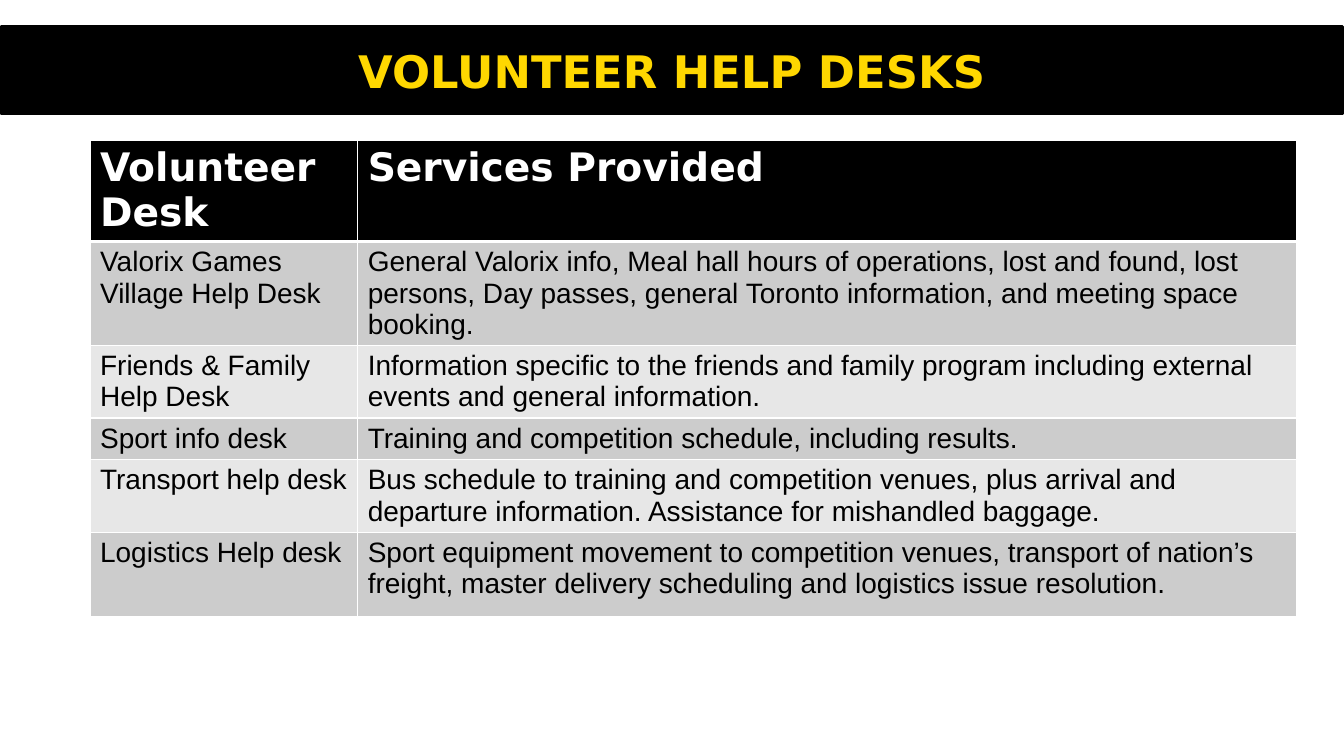
import pptx
import pptx.dml.color
import pptx.enum.shapes
import pptx.enum.text
import pptx.oxml
import pptx.oxml.ns
import pptx.util

Pt = pptx.util.Pt
COLORS = {
    "black": "000000",
    "gold": "FFD700",
    "white": "FFFFFF",
    "dark_band": "CCCCCC",
    "light_band": "E7E7E7",
}
HEADING_FONT = "DejaVu Sans"
BODY_FONT = "Arial"

HEADINGS = ("Volunteer Desk", "Services Provided")
DESKS = [
    ("Valorix Games Village Help Desk",
     "General Valorix info, Meal hall hours of operations, lost and found, lost persons, "
     "Day passes, general Toronto information, and meeting space booking."),
    ("Friends & Family Help Desk",
     "Information specific to the friends and family program including external events "
     "and general information."),
    ("Sport info desk",
     "Training and competition schedule, including results."),
    ("Transport help desk",
     "Bus schedule to training and competition venues, plus arrival and departure "
     "information. Assistance for mishandled baggage."),
    ("Logistics Help desk",
     "Sport equipment movement to competition venues, transport of nation’s freight, "
     "master delivery scheduling and logistics issue resolution."),
]
COLUMN_WIDTHS = (191.2, 670.8)
ROW_HEIGHTS = (72.5, 74, 52, 29.5, 52, 60)


def rgb(name):
    return pptx.dml.color.RGBColor.from_string(COLORS[name])


def style_text(paragraph, font_name, size, color, bold):
    for run in paragraph.runs:
        run.font.name = font_name
        run.font.size = Pt(size)
        run.font.bold = bold
        run.font.color.rgb = rgb(color)


def add_title(slide, text):
    title = slide.shapes.title
    title.left, title.top, title.width, title.height = Pt(48), Pt(19.5), Pt(864), Pt(62)
    frame = title.text_frame
    frame.text = text
    frame.vertical_anchor = pptx.enum.text.MSO_ANCHOR.MIDDLE
    frame.paragraphs[0].alignment = pptx.enum.text.PP_ALIGN.CENTER
    style_text(frame.paragraphs[0], HEADING_FONT, 32, "gold", True)
    return title


def add_title_band(slide, title):
    band = slide.shapes.add_shape(
        pptx.enum.shapes.MSO_SHAPE.RECTANGLE, Pt(0.75), Pt(19), Pt(958.5), Pt(62.5))
    band.shadow.inherit = False
    band.fill.solid()
    band.fill.fore_color.rgb = rgb("black")
    band.line.color.rgb = rgb("black")
    band.line.width = Pt(2)
    title.element.addprevious(band.element)


def set_borders(cell, top, bottom):
    properties = cell._tc.get_or_add_tcPr()
    for side, width in (("L", 1), ("R", 1), ("T", top), ("B", bottom)):
        properties.append(pptx.oxml.parse_xml(
            f'<a:ln{side} {pptx.oxml.ns.nsdecls("a")} w="{Pt(width)}"><a:solidFill>'
            f'<a:srgbClr val="{COLORS["white"]}"/></a:solidFill></a:ln{side}>'))


def fill_cell(cell, text, row):
    set_borders(cell, 3 if row == 1 else 1, 3 if row == 0 else 1)
    cell.text_frame.text = text
    cell.fill.solid()
    paragraph = cell.text_frame.paragraphs[0]
    if row == 0:
        cell.fill.fore_color.rgb = rgb("black")
        style_text(paragraph, HEADING_FONT, 28, "white", True)
    else:
        cell.fill.fore_color.rgb = rgb("dark_band" if row % 2 else "light_band")
        style_text(paragraph, BODY_FONT, 20, "black", False)


def add_desk_table(slide):
    rows = [HEADINGS, *DESKS]
    desks = slide.shapes.add_table(
        len(rows), len(HEADINGS), Pt(64.3), Pt(100),
        Pt(sum(COLUMN_WIDTHS)), Pt(sum(ROW_HEIGHTS))).table
    for column, width in zip(desks.columns, COLUMN_WIDTHS):
        column.width = Pt(width)
    for index, (texts, height) in enumerate(zip(rows, ROW_HEIGHTS)):
        desks.rows[index].height = Pt(height)
        for cell, text in zip(desks.rows[index].cells, texts):
            fill_cell(cell, text, index)


def main():
    deck = pptx.Presentation()
    deck.slide_width, deck.slide_height = Pt(960), Pt(540)
    slide = deck.slides.add_slide(deck.slide_layouts.get_by_name("Title Only"))
    title = add_title(slide, "VOLUNTEER HELP DESKS")
    add_title_band(slide, title)
    add_desk_table(slide)
    deck.save("out.pptx")


if __name__ == "__main__":
    main()
